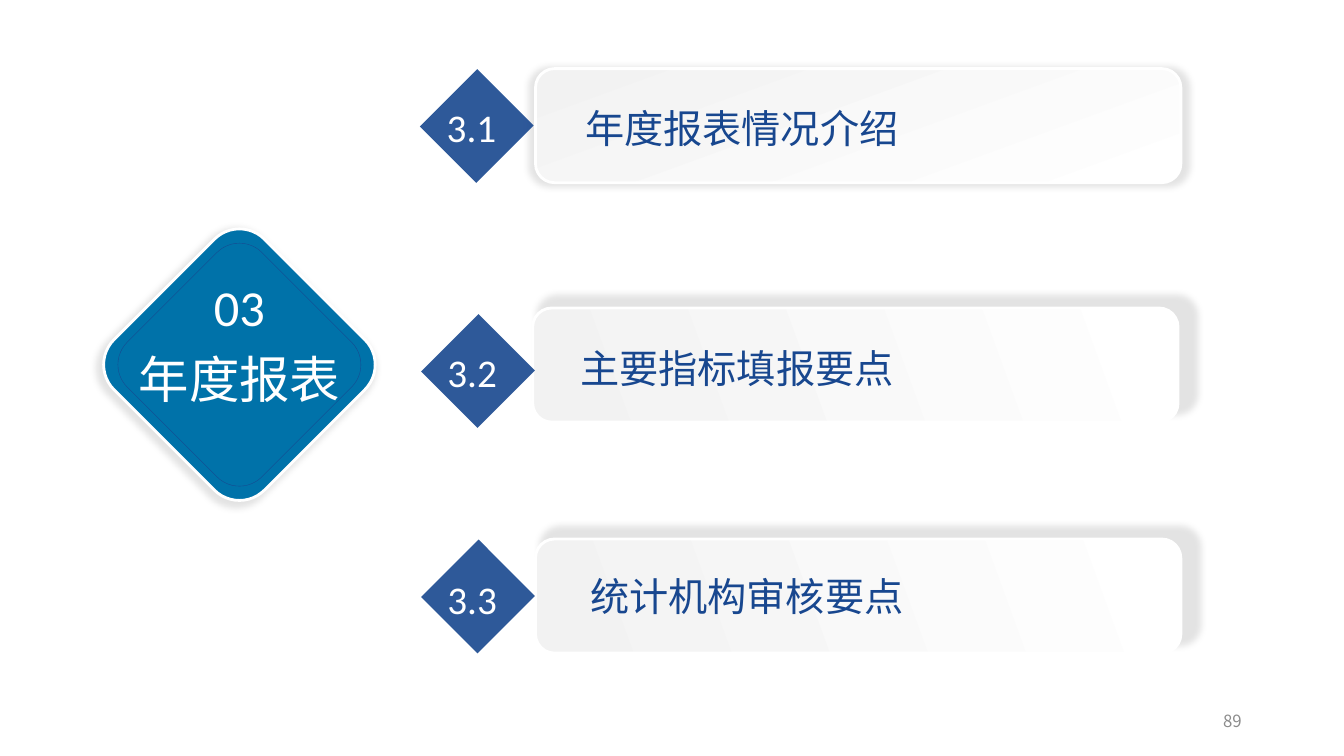
from dataclasses import dataclass
from lxml import etree
from pptx import Presentation
from pptx.dml.color import RGBColor
from pptx.enum.shapes import MSO_SHAPE
from pptx.enum.text import MSO_ANCHOR, PP_ALIGN
from pptx.oxml.ns import qn
from pptx.util import Pt

RECT = MSO_SHAPE.RECTANGLE
ROUND = MSO_SHAPE.ROUNDED_RECTANGLE
LEFT, MID, RIGHT = PP_ALIGN.LEFT, PP_ALIGN.CENTER, PP_ALIGN.RIGHT
TOP, CENTER = MSO_ANCHOR.TOP, MSO_ANCHOR.MIDDLE


@dataclass(frozen=True)
class Theme:
    navy: str = "18478F"
    blue: str = "0072A9"
    white: str = "FFFFFF"
    pale: str = "F2F2F2"
    gray: str = "8C8C8C"
    black: str = "000000"
    font: str = "Calibri"
    cjk: str = "Noto Sans CJK SC"
    big: int = 36
    body: int = 28
    small: int = 12


THEME = Theme()
ROWS = [
    ("3.1", "年度报表情况介绍", (382.5, 49), (312, 61), (312, 70), (411, 71), 250, 0),
    ("3.2", "主要指标填报要点", (380.5, 220), (313, 236), (312.5, 245.5), (407.5, 242.5), 160, 11),
    ("3.3", "统计机构审核要点", (382.5, 385), (313, 397), (312.5, 407.5), (414.5, 405.5), 160, 11),
]


def color(code):
    return RGBColor.from_string(code)


def add_text(slide, text, box, size=THEME.body, ink=THEME.white,
             font=THEME.font, align=LEFT, anchor=TOP):
    frame = slide.shapes.add_textbox(*map(Pt, box)).text_frame
    frame.word_wrap = True
    frame.vertical_anchor = anchor
    para = frame.paragraphs[0]
    para.alignment = align
    run = para.add_run()
    run.text = text
    run.font.size = Pt(size)
    run.font.name = font
    run.font.color.rgb = color(ink)


def add_shape(slide, kind, box, turn=0, fill=None, line=None, width=2):
    shape = slide.shapes.add_shape(kind, *map(Pt, box))
    shape.rotation = turn
    shape.shadow.inherit = False
    if fill:
        shape.fill.solid()
        shape.fill.fore_color.rgb = color(fill)
    else:
        shape.fill.background()
    if line:
        shape.line.color.rgb = color(line)
        shape.line.width = Pt(width)
    else:
        shape.line.fill.background()
    return shape


def set_alpha(node, share):
    etree.SubElement(node, qn("a:alpha"), val=str(share * 1000))


def add_shadow(shape, shift=0, angle=0):
    effects = shape._element.spPr.find(qn("a:effectLst"))
    outer = etree.SubElement(
        effects, qn("a:outerShdw"), blurRad=str(Pt(5)), dist=str(Pt(shift)),
        dir=str(angle * 60000), sx="102000", sy="102000", algn="ctr",
        rotWithShape="0")
    tint = etree.SubElement(outer, qn("a:srgbClr"), val=THEME.black)
    set_alpha(tint, 11)


def add_card(slide, spot, angle, shift):
    card = add_shape(slide, ROUND, (*spot, 461, 81.5), line=THEME.white)
    card.fill.gradient()
    card.fill.gradient_angle = 360 - angle
    for stop, code in zip(card.fill.gradient_stops, (THEME.white, THEME.pale)):
        stop.color.rgb = color(code)
    stops = card.fill.gradient_stops
    stops[0].position, stops[1].position = 0, 1
    add_shadow(card, shift, 315)


def add_badge(slide, spot):
    badge = add_shape(slide, RECT, (*spot, 57, 58), 225, THEME.navy)
    set_alpha(badge._element.spPr.find(qn("a:solidFill"))[0], 90)


def add_row(slide, row):
    number, label, card, badge, mark, words, angle, shift = row
    add_card(slide, card, angle, shift)
    add_badge(slide, badge)
    add_text(slide, number, (*mark, 62, 41))
    add_text(slide, label, (*words, 403, 41), ink=THEME.navy)


def add_topic(slide):
    tile = add_shape(slide, ROUND, (95, 184.5, 152, 152), 45, THEME.blue, THEME.white)
    add_shadow(tile, 2, 135)
    add_shape(slide, ROUND, (103, 192.5, 136, 136), 45, line=THEME.navy, width=0.25)
    for text, top in (("03", 193.5), ("年度报表", 245)):
        add_text(slide, text, (80.5, top, 181, 51), size=THEME.big, align=MID)


def main():
    deck = Presentation()
    deck.slide_width, deck.slide_height = Pt(960), Pt(540)
    slide = deck.slides.add_slide(deck.slide_layouts[6])
    add_text(slide, "89", (678, 500.5, 216, 29), size=THEME.small, ink=THEME.gray,
             font=THEME.cjk, align=RIGHT, anchor=CENTER)
    add_topic(slide)
    for row in ROWS:
        add_row(slide, row)
    deck.save("out.pptx")


if __name__ == "__main__":
    main()
